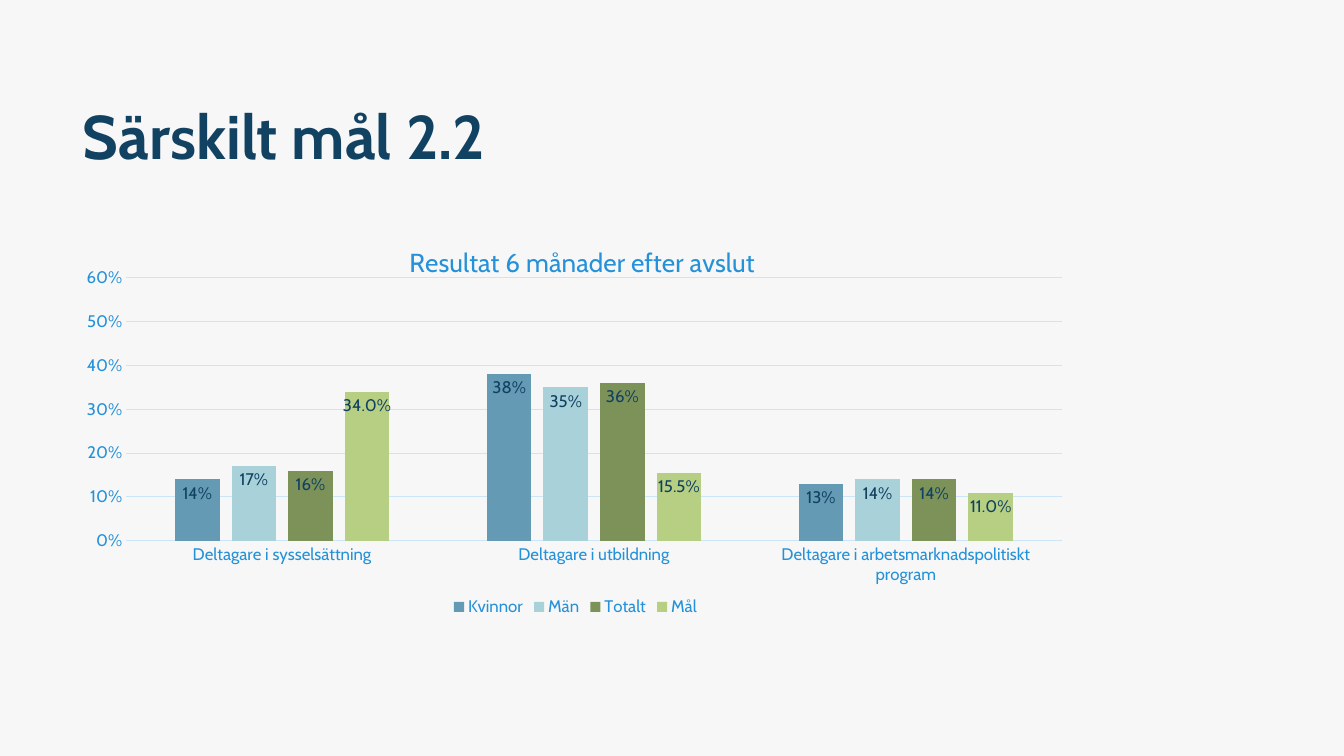
from dataclasses import dataclass

from lxml import etree
from pptx import Presentation
from pptx import util as u
from pptx.chart.data import CategoryChartData
from pptx.dml.color import RGBColor
from pptx.enum import chart as ch, text
from pptx.oxml.ns import qn


@dataclass(frozen=True)
class Theme:
    """Colours, font and type sizes of the slide."""
    back: str = "F8F7F7"
    head: str = "124261"
    value: str = "104161"
    label: str = "2491D8"
    grid: str = "CCE6F7"
    face: str = "Cabin"
    big: float = 44
    mid: float = 18.6
    small: float = 12


LOOK = Theme()
GROUPS = ["Deltagare i sysselsättning", "Deltagare i utbildning",
          "Deltagare i arbetsmarknadspolitiskt program"]
SERIES = [
    ("Kvinnor", (0.14, 0.38, 0.13), "649AB3", "0%"),
    ("Män", (0.17, 0.35, 0.14), "A9D1DA", "0%"),
    ("Totalt", (0.16, 0.36, 0.14), "7C9259", "0%"),
    ("Mål", (0.34, 0.155, 0.11), "B7CF83", "0.0%"),
]


def px(n):
    """Turn px into EMU."""
    return u.Emu(round(n * 914400 / 100.8))


def rgb(hue):
    """Give the colour for a hex string."""
    return RGBColor.from_string(hue)


def style(font, size, hue, bold=False):
    """Set face, size, colour and weight of a font."""
    font.name, font.size, font.bold = LOOK.face, u.Pt(size), bold
    font.color.rgb = rgb(hue)


def rule(line):
    """Give a chart line the grid colour and width."""
    line.color.rgb = rgb(LOOK.grid)
    line.width = u.Pt(0.75)


def pin(node, index, **spots):
    """Fix a chart part at fractions of the chart area."""
    for old in node.findall(qn("c:layout")):
        node.remove(old)
    layout = etree.Element(qn("c:layout"))
    manual = etree.SubElement(layout, qn("c:manualLayout"))
    for tag, val in spots.items():
        etree.SubElement(manual, qn("c:" + tag)).set("val", str(val))
    node.insert(index, layout)


def heading(slide, x, y, w, h):
    """Place the slide heading in its box."""
    frame = slide.shapes.add_textbox(px(x), px(y), px(w), px(h)).text_frame
    frame.word_wrap = True
    frame.vertical_anchor = text.MSO_ANCHOR.MIDDLE
    run = frame.paragraphs[0].add_run()
    run.text = "Särskilt mål 2.2"
    style(run.font, LOOK.big, LOOK.head, True)


def axes(chart):
    """Style both axes and the grid."""
    for axis in (chart.category_axis, chart.value_axis):
        axis.major_tick_mark = axis.minor_tick_mark = ch.XL_TICK_MARK.NONE
        style(axis.tick_labels.font, LOOK.small, LOOK.label)
    rule(chart.category_axis.format.line)
    scale = chart.value_axis
    scale.minimum_scale, scale.maximum_scale, scale.major_unit = 0, 0.6, 0.1
    scale.format.line.fill.background()
    rule(scale.major_gridlines.format.line)
    scale.tick_labels.number_format = "0%"
    scale.tick_labels.number_format_is_linked = False


def bars(plot):
    """Colour the bars and label their values."""
    plot.gap_width, plot.overlap, plot.vary_by_categories = 219, -27, False
    for bar, (_, _, hue, form) in zip(plot.series, SERIES):
        bar.format.fill.solid()
        bar.format.fill.fore_color.rgb = rgb(hue)
        bar.invert_if_negative = False
        tags = bar.data_labels
        tags.show_value = True
        tags.position = ch.XL_LABEL_POSITION.INSIDE_END
        tags.number_format, tags.number_format_is_linked = form, False
        style(tags.font, LOOK.small, LOOK.value)


def results(slide, x, y, w, h):
    """Place the column chart with title and legend in its box."""
    data = CategoryChartData()
    data.categories = GROUPS
    for name, vals, _, form in SERIES:
        data.add_series(name, vals, form)
    chart = slide.shapes.add_chart(ch.XL_CHART_TYPE.COLUMN_CLUSTERED,
                                   px(x), px(y), px(w), px(h), data).chart
    style(chart.font, LOOK.small, LOOK.value)
    chart.has_title = True
    title = chart.chart_title
    run = title.text_frame.paragraphs[0].add_run()
    run.text = "Resultat 6 månader efter avslut"
    style(run.font, LOOK.mid, LOOK.label)
    title.include_in_layout = False
    pin(title._element, 1, xMode="edge", yMode="edge", x=0.33, y=0.05)
    chart.has_legend = True
    chart.legend.position = ch.XL_LEGEND_POSITION.BOTTOM
    chart.legend.include_in_layout = False
    style(chart.legend.font, LOOK.small, LOOK.label)
    axes(chart)
    bars(chart.plots[0])
    pin(chart._chartSpace.chart.plotArea, 0, layoutTarget="inner",
        xMode="edge", yMode="edge", x=0.053, y=0.146, w=0.931, h=0.655)


def main():
    """Build and save the slide."""
    deck = Presentation()
    deck.slide_width, deck.slide_height = px(1344), px(756)
    slide = deck.slides.add_slide(deck.slide_layouts[6])
    slide.background.fill.solid()
    slide.background.fill.fore_color.rgb = rgb(LOOK.back)
    left, wide = 73, 1005
    heading(slide, left, 62, wide, 146)
    results(slide, left, 219, wide, 402)
    deck.save("out.pptx")


if __name__ == "__main__":
    main()
